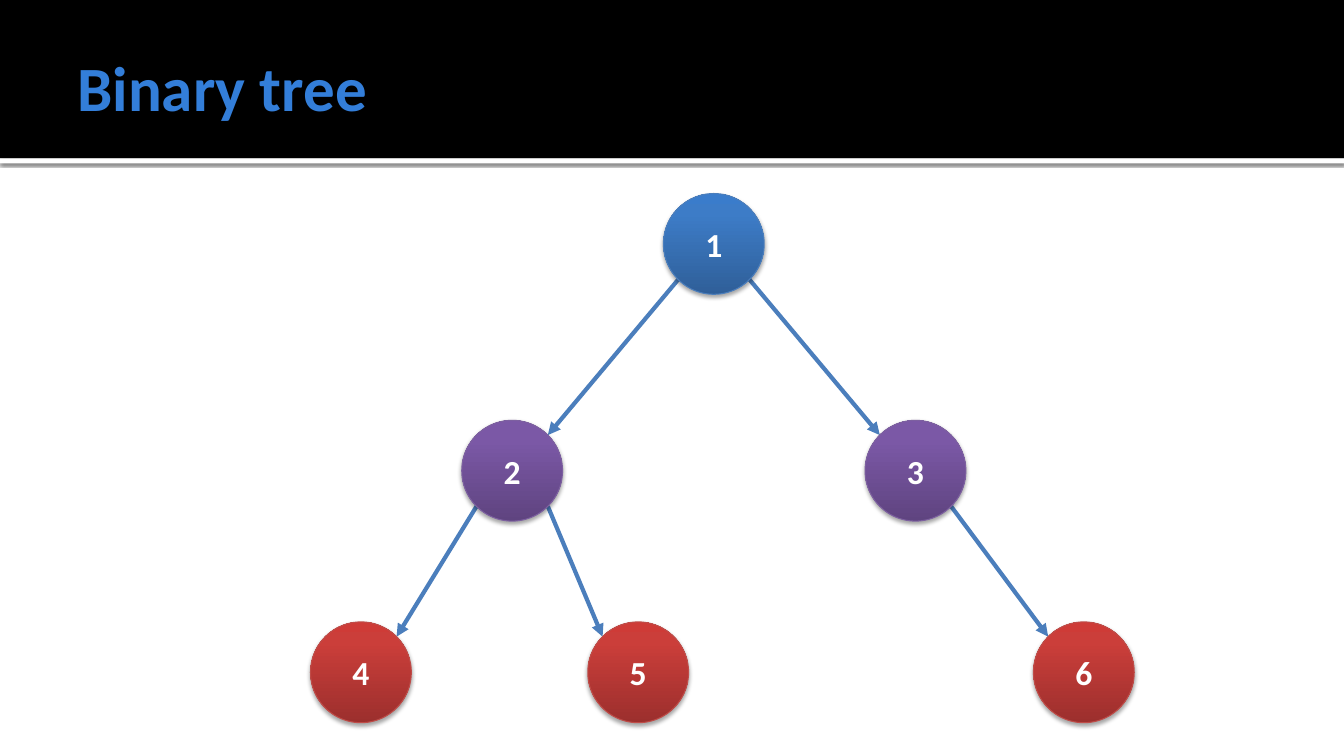
from copy import deepcopy
from lxml import etree
from pptx import Presentation
from pptx.dml.color import RGBColor
from pptx.enum.shapes import MSO_CONNECTOR, MSO_SHAPE
from pptx.enum.text import MSO_ANCHOR, PP_ALIGN
from pptx.oxml.ns import qn
from pptx.util import Inches, Pt

RECT, OVAL = MSO_SHAPE.RECTANGLE, MSO_SHAPE.OVAL
LINE = MSO_CONNECTOR.STRAIGHT
MIDDLE, CENTER = MSO_ANCHOR.MIDDLE, PP_ALIGN.CENTER


def color(code):
    return RGBColor.from_string(code)


def shade(shape, alpha, blur, dist):
    shape.shadow.inherit = False
    effects = shape._element.spPr.find(qn("a:effectLst"))
    outer = etree.SubElement(effects, qn("a:outerShdw"), blurRad=str(Pt(blur)),
                             dist=str(Pt(dist)), dir="5400000", rotWithShape="0")
    black = etree.SubElement(outer, qn("a:srgbClr"), val="000000")
    etree.SubElement(black, qn("a:alpha"), val=str(alpha * 1000))


deck = Presentation()
deck.slide_width, deck.slide_height = Inches(13.33), Inches(7.5)
slide = deck.slides.add_slide(deck.slide_layouts[6])
shapes = slide.shapes

for top, high, fill in [(1.57, 0.05, "FFFFFF"), (0, 1.57, "000000")]:
    band = shapes.add_shape(RECT, 0, Inches(top), deck.slide_width, Inches(high))
    band.fill.solid()
    band.fill.fore_color.rgb = color(fill)
    band.line.fill.background()
    band.shadow.inherit = False
    if top:
        shade(band, 60, 2.5, 0.8)

title = shapes.add_textbox(Inches(0.67), Inches(0.17), Inches(12), Inches(1.37))
frame = title.text_frame
frame.word_wrap = True
frame.vertical_anchor = MIDDLE
frame.margin_right = Inches(0.05)
frame.text = "Binary tree"
font = frame.paragraphs[0].runs[0].font
font.name, font.size, font.bold = "Calibri", Pt(45), True
font.color.rgb = color("337ED9")

BLUE = ("2F5F99", "3D7CC7", "3A7CCB", "4B7EBC")
PURPLE = ("5F4480", "7B58A6", "7C57A8", "7D60A0")
RED = ("9C2F2D", "CB3E3A", "CE3B37", "BF4C48")
SIZE = 1
DIAG = SIZE / 2 * 0.5 ** 0.5

nodes = {
    1: (7.08, 2.42, BLUE),
    2: (5.08, 4.67, PURPLE),
    3: (9.08, 4.67, PURPLE),
    4: (3.58, 6.67, RED),
    5: (6.33, 6.67, RED),
    6: (10.75, 6.67, RED),
}
edges = [(1, 2), (2, 4), (2, 5), (1, 3), (3, 6)]

for parent, child in edges:
    x1, y1, _ = nodes[parent]
    x2, y2, _ = nodes[child]
    side = DIAG if x2 > x1 else -DIAG
    arrow = shapes.add_connector(LINE, Inches(x1 + side), Inches(y1 + DIAG),
                                 Inches(x2 - side), Inches(y2 - DIAG))
    arrow.line.color.rgb = color("4B7EBC")
    arrow.line.width = Pt(3)
    etree.SubElement(arrow.line._get_or_add_ln(), qn("a:tailEnd"), type="triangle")
    etree.SubElement(arrow._element.spPr, qn("a:effectLst"))

for label, (x, y, hues) in nodes.items():
    node = shapes.add_shape(OVAL, Inches(x - SIZE / 2), Inches(y - SIZE / 2),
                            Inches(SIZE), Inches(SIZE))
    node.fill.gradient()
    node.fill.gradient_angle = 90
    stops = node._element.spPr.find(qn("a:gradFill")).find(qn("a:gsLst"))
    stops.append(deepcopy(stops[-1]))
    for stop, place, hue in zip(node.fill.gradient_stops, (0, 0.8, 1), hues):
        stop.position = place
        stop.color.rgb = color(hue)
    node.line.color.rgb = color(hues[3])
    node.line.width = Pt(0.75)
    shade(node, 35, 3.1, 1.8)
    frame = node.text_frame
    frame.vertical_anchor = MIDDLE
    frame.text = str(label)
    frame.paragraphs[0].alignment = CENTER
    font = frame.paragraphs[0].runs[0].font
    font.name, font.size, font.bold = "Calibri", Pt(24), True
    font.color.rgb = color("FFFFFF")

deck.save("out.pptx")
